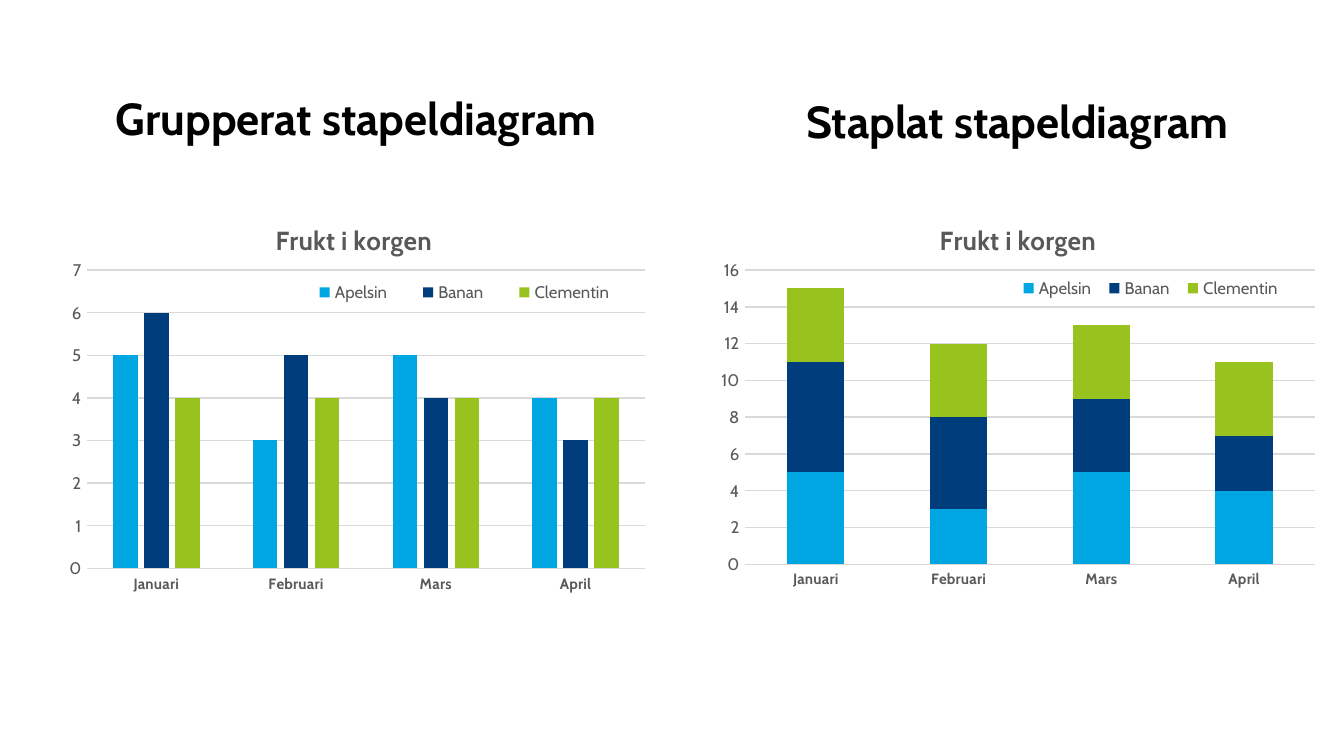
from lxml import etree
from pptx import Presentation
from pptx.chart.data import CategoryChartData
from pptx.dml.color import RGBColor
from pptx.enum.chart import XL_CHART_TYPE, XL_LEGEND_POSITION, XL_TICK_MARK
from pptx.enum.text import MSO_ANCHOR, PP_ALIGN
from pptx.oxml.ns import qn
from pptx.util import Inches, Pt

FONT = "Cabin"
BLACK = RGBColor(0x00, 0x00, 0x00)
GREY = RGBColor(0x59, 0x59, 0x59)
GRID = RGBColor(0xD9, 0xD9, 0xD9)
MONTHS = ["Januari", "Februari", "Mars", "April"]
FRUITS = [
    ("Apelsin", [5, 3, 5, 4], RGBColor(0x00, 0xA6, 0xE2)),
    ("Banan", [6, 5, 4, 3], RGBColor(0x00, 0x3D, 0x7C)),
    ("Clementin", [4, 4, 4, 4], RGBColor(0x98, 0xC2, 0x1D)),
]


def style_font(font, size, color=GREY, bold=False):
    """Set typeface, size, colour and weight."""
    font.name, font.size, font.bold = FONT, Pt(size), bold
    font.color.rgb = color


def style_line(line):
    """Give an axis or grid line the light rule."""
    line.color.rgb = GRID
    line.width = Pt(0.75)


def add_heading(slide, text, left, top, size=24, color=BLACK, bold=True):
    """Add a centred heading above a chart."""
    heading = slide.shapes.add_textbox(
        Inches(left), Inches(top), Inches(4.22), Inches(0.56)
    )
    frame = heading.text_frame
    frame.word_wrap = True
    frame.vertical_anchor = MSO_ANCHOR.TOP
    paragraph = frame.paragraphs[0]
    paragraph.alignment = PP_ALIGN.CENTER
    paragraph.line_spacing = 0.9
    run = paragraph.add_run()
    run.text = text
    style_font(run.font, size, color, bold)


def place(part, inner=False, **fractions):
    """Place a chart part by fractions of the chart area."""
    for old in part.findall(qn("c:layout")):
        part.remove(old)
    layout = etree.Element(qn("c:layout"))
    manual = etree.SubElement(layout, qn("c:manualLayout"))
    settings = [("layoutTarget", "inner")] if inner else []
    settings += [("xMode", "edge"), ("yMode", "edge")]
    settings += fractions.items()
    for name, value in settings:
        etree.SubElement(manual, qn(f"c:{name}")).set("val", str(value))
    overlay = part.find(qn("c:overlay"))
    if overlay is None:
        part.insert(0, layout)
    else:
        overlay.addprevious(layout)


def style_axes(chart, maximum, step):
    """Style the month axis and the count axis."""
    months, counts = chart.category_axis, chart.value_axis
    for axis in (months, counts):
        axis.major_tick_mark = axis.minor_tick_mark = XL_TICK_MARK.NONE
    style_font(months.tick_labels.font, 8, bold=True)
    style_line(months.format.line)
    style_font(counts.tick_labels.font, 9)
    counts.format.line.fill.background()
    style_line(counts.major_gridlines.format.line)
    counts.minimum_scale, counts.maximum_scale = 0, maximum
    counts.major_unit = step


def add_fruit_chart(slide, kind, left, width, gap, overlap, maximum, step,
                    plot_area, title_spot, legend_position, legend_area):
    """Add a column chart of the fruit counts."""
    counts = CategoryChartData()
    counts.categories = MONTHS
    for name, values, _ in FRUITS:
        counts.add_series(name, values)
    chart = slide.shapes.add_chart(
        kind, Inches(left), Inches(1.5), Inches(width), Inches(3), counts
    ).chart
    style_font(chart.font, 10, BLACK)

    title = chart.chart_title.text_frame
    title.text = "Frukt i korgen"
    style_font(title.paragraphs[0].runs[0].font, 14, bold=True)
    place(chart.chart_title._element, **title_spot)

    chart.has_legend = True
    chart.legend.position = legend_position
    chart.legend.include_in_layout = False
    style_font(chart.legend.font, 9)
    place(chart.legend._element, **legend_area)

    plot = chart.plots[0]
    plot.gap_width, plot.overlap, plot.vary_by_categories = gap, overlap, False
    for series, (_, _, color) in zip(plot.series, FRUITS):
        series.format.fill.solid()
        series.format.fill.fore_color.rgb = color
    style_axes(chart, maximum, step)
    place(chart._chartSpace.chart.plotArea, inner=True, **plot_area)


def main():
    """Build the slide with grouped and stacked columns."""
    deck = Presentation()
    deck.slide_width, deck.slide_height = Inches(10), Inches(10 * 9 / 16)
    slide = deck.slides.add_slide(deck.slide_layouts[6])
    add_heading(slide, "Grupperat stapeldiagram", 0.54, 0.67)
    add_heading(slide, "Staplat stapeldiagram", 5.46, 0.69)
    add_fruit_chart(
        slide, XL_CHART_TYPE.COLUMN_CLUSTERED, 0.37, 4.57,
        gap=219, overlap=-27, maximum=7, step=1,
        plot_area=dict(x=0.06, y=0.17, w=0.91, h=0.74),
        title_spot=dict(x=0.36, y=0.04),
        legend_position=XL_LEGEND_POSITION.BOTTOM,
        legend_area=dict(x=0.39, y=0.18, w=0.57, h=0.09),
    )
    add_fruit_chart(
        slide, XL_CHART_TYPE.COLUMN_STACKED, 5.21, 4.72,
        gap=150, overlap=100, maximum=16, step=2,
        plot_area=dict(x=0.07, y=0.17, w=0.9, h=0.73),
        title_spot=dict(x=0.37, y=0.04),
        legend_position=XL_LEGEND_POSITION.TOP,
        legend_area=dict(x=0.49, y=0.17, w=0.44, h=0.09),
    )
    deck.save("out.pptx")


if __name__ == "__main__":
    main()
